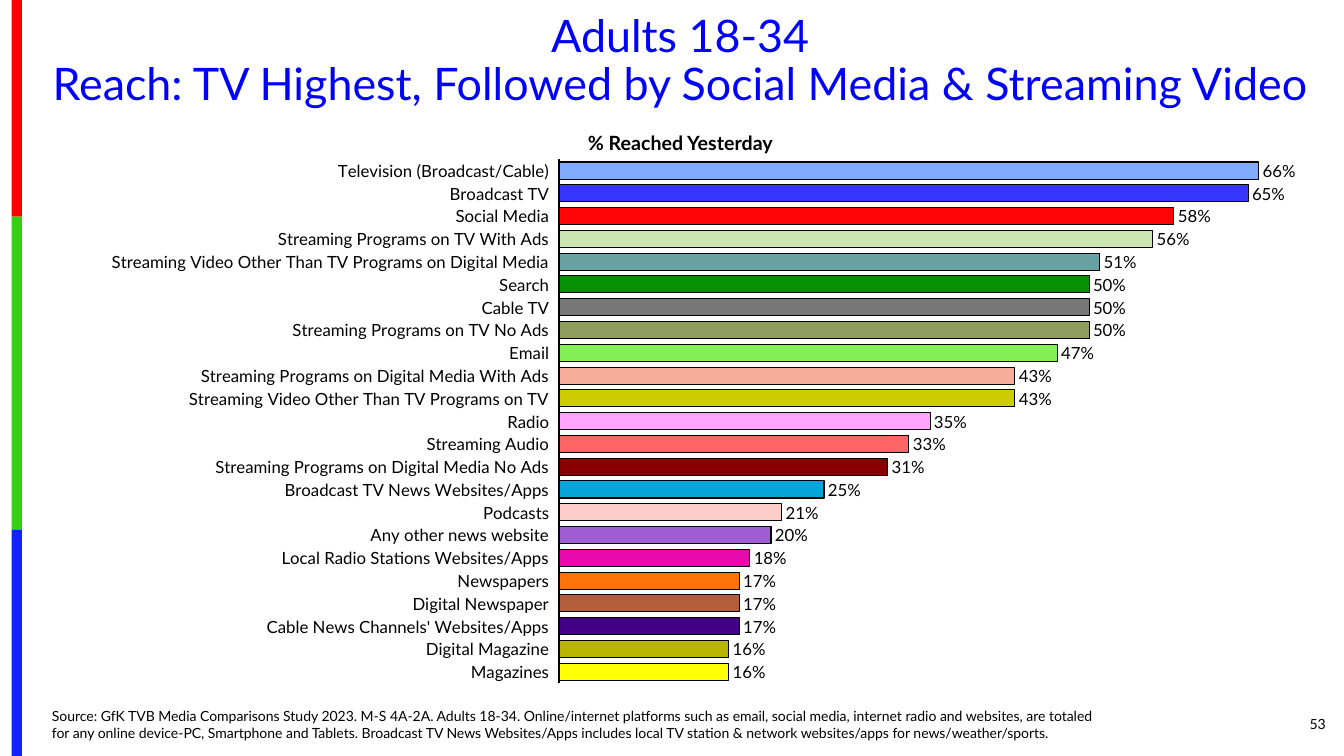
from lxml.etree import SubElement as Sub, QName
from pptx import Presentation
from pptx.chart.data import CategoryChartData as Data
from pptx.dml.color import RGBColor as RGB
from pptx.enum.chart import XL_CHART_TYPE as Kind, XL_LABEL_POSITION as Spot
from pptx.enum.chart import XL_TICK_LABEL_POSITION as Tick, XL_TICK_MARK as Mark
from pptx.enum.shapes import MSO_SHAPE as Shape
from pptx.enum.text import MSO_ANCHOR as Anchor, PP_ALIGN as Align
from pptx.oxml.ns import qn
from pptx.util import Inches, Pt

THEME = {
    "font": "Lato", "ink": "000000", "title": "0000FF",
    "strip": ["FE0000", "36CF12", "1322FE"],
    "big": 32, "head": 14, "label": 12, "small": 10,
}
COLS, ROWS = 160, 90

BARS = [
    ("Television (Broadcast/Cable)", 0.66, "80ABFF"),
    ("Broadcast TV", 0.65, "3636FF"),
    ("Social Media", 0.58, "FF0505"),
    ("Streaming Programs on TV With Ads", 0.56, "CCE6B2"),
    ("Streaming Video Other Than TV Programs on Digital Media", 0.51, "67A1A1"),
    ("Search", 0.50, "059005"),
    ("Cable TV", 0.50, "787878"),
    ("Streaming Programs on TV No Ads", 0.50, "909C5E"),
    ("Email", 0.47, "84F058"),
    ("Streaming Programs on Digital Media With Ads", 0.43, "F5AD99"),
    ("Streaming Video Other Than TV Programs on TV", 0.43, "CCCC00"),
    ("Radio", 0.35, "FFA4FF"),
    ("Streaming Audio", 0.33, "FF6666"),
    ("Streaming Programs on Digital Media No Ads", 0.31, "8A0000"),
    ("Broadcast TV News Websites/Apps", 0.25, "05A4D9"),
    ("Podcasts", 0.21, "FFCCCC"),
    ("Any other news website", 0.20, "9F5FD0"),
    ("Local Radio Stations Websites/Apps", 0.18, "E80AAF"),
    ("Newspapers", 0.17, "FF730A"),
    ("Digital Newspaper", 0.17, "B25E3C"),
    ("Cable News Channels' Websites/Apps", 0.17, "430086"),
    ("Digital Magazine", 0.16, "B8B400"),
    ("Magazines", 0.16, "FFFF05"),
]

deck = Presentation()
deck.slide_width, deck.slide_height = Inches(13.33), Inches(7.5)
slide = deck.slides.add_slide(deck.slide_layouts[6])


def area(col, row, wide, high):
    """Turn grid units into left, top, width and height."""
    dx, dy = deck.slide_width / COLS, deck.slide_height / ROWS
    return [round(n) for n in (col * dx, row * dy, wide * dx, high * dy)]


def write(text, box, size, color=THEME["ink"], bold=False,
          align=Align.LEFT, anchor=Anchor.TOP, lead=1.0):
    frame = slide.shapes.add_textbox(*area(*box)).text_frame
    frame.word_wrap = True
    frame.vertical_anchor = anchor
    para = frame.paragraphs[0]
    para.text = text
    para.alignment, para.line_spacing = align, lead
    font = para.font
    font.name, font.size, font.bold = THEME["font"], Pt(size), bold
    font.color.rgb = RGB.from_string(color)


# Colour strip down the left edge
top = 0
for color, high in zip(THEME["strip"], (25.8, 37.3, 26.9)):
    band = slide.shapes.add_shape(Shape.RECTANGLE, *area(1.4, top, 1.2, high))
    band.shadow.inherit = False
    band.fill.solid()
    band.fill.fore_color.rgb = RGB.from_string(color)
    band.line.fill.background()
    top += high

# Title, page number and source
write("Adults 18-34\vReach: TV Highest, Followed by Social Media & Streaming Video",
      (4, 1, 154, 12.8), THEME["big"], THEME["title"], align=Align.CENTER, lead=0.9)
write("53", (146, 83.8, 13, 4.8), THEME["small"], align=Align.RIGHT, anchor=Anchor.MIDDLE)
write("Source: GfK TVB Media Comparisons Study 2023. M-S 4A-2A. Adults 18-34. "
      "Online/internet platforms such as email, social media, internet radio and "
      "websites, are totaled for any online device-PC, Smartphone and Tablets. "
      "Broadcast TV News Websites/Apps includes local TV station & network "
      "websites/apps for news/weather/sports.",
      (5, 83.5, 128.3, 5.3), THEME["small"], anchor=Anchor.BOTTOM)
write("% Reached Yesterday", (61, 15, 40, 4), THEME["head"], bold=True, align=Align.CENTER)

# Bar chart
names, shares, fills = zip(*BARS)
data = Data(number_format="0%")
data.categories = names
data.add_series("Series 1", shares)
chart = slide.shapes.add_chart(Kind.BAR_CLUSTERED, *area(3, 17, 155, 65), data).chart
chart.has_legend = chart.has_title = False
chart.font.name, chart.font.size = THEME["font"], Pt(THEME["label"])
chart.font.color.rgb = RGB.from_string(THEME["ink"])

axis = chart.category_axis
axis.reverse_order = True
axis.major_tick_mark = axis.minor_tick_mark = Mark.NONE
axis.tick_label_position = Tick.LOW
axis.format.line.color.rgb = RGB.from_string(THEME["ink"])
axis.format.line.width = Pt(1.5)

scale = chart.value_axis
scale.minimum_scale, scale.maximum_scale = 0, 0.7
scale.has_major_gridlines = False
scale.visible = False

plot = chart.plots[0]
plot.gap_width, plot.vary_by_categories = 34, False
plot.has_data_labels = True
labels = plot.data_labels
labels.show_value, labels.position = True, Spot.OUTSIDE_END
labels.number_format, labels.number_format_is_linked = "0%", False
labels.font.name, labels.font.size = THEME["font"], Pt(THEME["label"])
labels.font.color.rgb = RGB.from_string(THEME["ink"])

for index, color in enumerate(fills):
    style = plot.series[0].points[index].format
    style.fill.solid()
    style.fill.fore_color.rgb = RGB.from_string(color)
    style.line.color.rgb = RGB.from_string(THEME["ink"])
    style.line.width = Pt(0.75)

# Fixed inner plot area, as shares of the chart
zone = next(chart.element.iter(qn("c:plotArea")))
for old in zone.findall(qn("c:layout")):
    zone.remove(old)
layout = Sub(zone, QName(qn("c:layout")))
zone.insert(0, layout)
manual = Sub(layout, qn("c:manualLayout"))
for tag, value in (("layoutTarget", "inner"), ("xMode", "edge"), ("yMode", "edge"),
                   ("x", 0.41), ("y", 0.03), ("w", 0.57), ("h", 0.96)):
    Sub(manual, qn(f"c:{tag}")).set("val", str(value))

deck.save("out.pptx")
